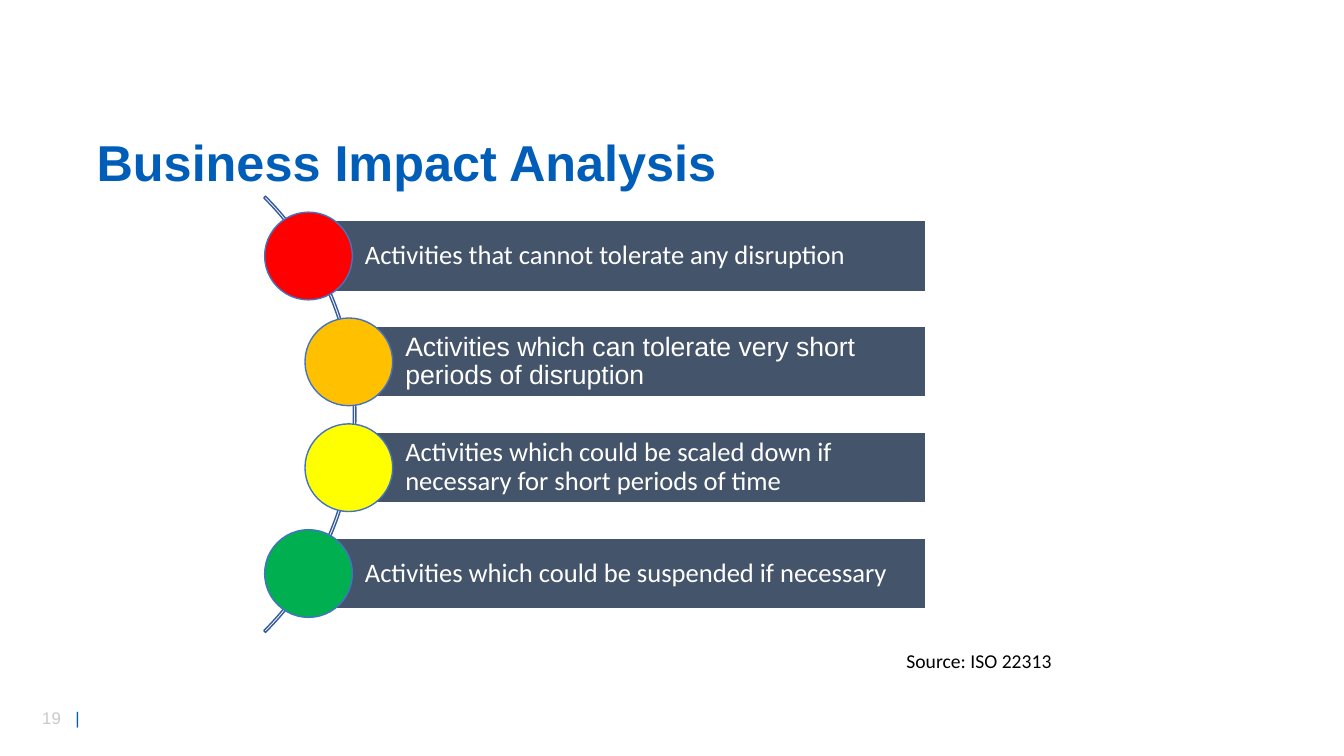
from pptx import Presentation
from pptx.dml.color import RGBColor
from pptx.enum.shapes import MSO_SHAPE
from pptx.enum.text import MSO_ANCHOR, PP_ALIGN
from pptx.oxml.ns import qn
from pptx.util import Inches, Pt
from lxml.etree import SubElement

BLUE = RGBColor(0x00, 0x5E, 0xB8)
SLATE = RGBColor(0x44, 0x54, 0x6A)
RIM = RGBColor(0x44, 0x72, 0xC4)
ARC = RGBColor(0x36, 0x5B, 0x9D)
GREY = RGBColor(0xC9, 0xC9, 0xC9)
WHITE = RGBColor(0xFF, 0xFF, 0xFF)
BLACK = RGBColor(0x00, 0x00, 0x00)
RED = RGBColor(0xFF, 0x00, 0x00)
AMBER = RGBColor(0xFF, 0xC0, 0x00)
YELLOW = RGBColor(0xFF, 0xFF, 0x00)
GREEN = RGBColor(0x00, 0xB0, 0x50)

LEVELS = [
    ("Activities that cannot tolerate any disruption", RED, 3.06, "Calibri"),
    ("Activities which can tolerate very short periods of disruption", AMBER, 3.46, "Arial"),
    ("Activities which could be scaled down if necessary for short periods of time",
     YELLOW, 3.46, "Calibri"),
    ("Activities which could be suspended if necessary", GREEN, 3.06, "Calibri"),
]
RIGHT, FIRST, STEP = 9.18, 2.54, 1.05
BAR, DOT = 0.7, 0.87


class Board:
    """Draws styled elements on the current slide."""

    def __init__(self, slide):
        self.slide = slide

    def style(self, run, size, color, font="Calibri", bold=False):
        run.font.name = font
        run.font.size = Pt(size)
        run.font.bold = bold
        run.font.color.rgb = color

    def fill(self, frame, text, *look, **more):
        frame.word_wrap = True
        frame.text = text
        para = frame.paragraphs[0]
        self.style(para.runs[0], *look, **more)
        return para

    def text(self, box, *look, **more):
        frame = self.slide.shapes.add_textbox(*map(Inches, box)).text_frame
        return self.fill(frame, *look, **more)

    def shape(self, kind, box, fill, line):
        shape = self.slide.shapes.add_shape(kind, *map(Inches, box))
        shape.shadow.inherit = False
        if fill is None:
            shape.fill.background()
        else:
            shape.fill.solid()
            shape.fill.fore_color.rgb = fill
        shape.line.color.rgb = line
        shape.line.width = Pt(1)
        return shape

    def arc(self, box):
        arc = self.shape(MSO_SHAPE.BLOCK_ARC, box, None, ARC)
        for spot, value in enumerate((189, 27, 0.004)):
            arc.adjustments[spot] = value

    def level(self, mid, text, color, left, font):
        box = (left, mid - BAR / 2, RIGHT - left, BAR)
        frame = self.shape(MSO_SHAPE.RECTANGLE, box, SLATE, WHITE).text_frame
        para = self.fill(frame, text, 19, WHITE, font)
        para.alignment = PP_ALIGN.LEFT
        para.line_spacing = 0.9
        frame.vertical_anchor = MSO_ANCHOR.MIDDLE
        frame.margin_left = Inches(0.56)
        frame.margin_right = frame.margin_top = frame.margin_bottom = Inches(0.05)
        self.shape(MSO_SHAPE.OVAL, (left - DOT / 2, mid - DOT / 2, DOT, DOT), color, RIM)

    def number(self, box, text):
        para = self.text(box, text, 12, GREY, "Arial")
        tabs = SubElement(para._p.get_or_add_pPr(), qn("a:tabLst"))
        SubElement(tabs, qn("a:tab"), pos=str(Inches(0.33)), algn="l")
        mark = para.add_run()
        mark.text = "\t|"
        self.style(mark, 12, BLUE, "Arial")


def main():
    deck = Presentation()
    deck.slide_width = Inches(13.33)
    deck.slide_height = Inches(7.5)
    board = Board(deck.slides.add_slide(deck.slide_layouts[6]))
    board.number((0.32, 6.97, 0.71, 0.3), "19")
    title = board.text((0.86, 1.32, 11.64, 0.67), "Business Impact Analysis",
                       36, BLUE, "Arial", bold=True)
    title.line_spacing = 0.9
    board.arc((-2.59, 1.05, 6.12, 6.12))
    for row, level in enumerate(LEVELS):
        board.level(FIRST + row * STEP, *level)
    source = board.text((8.13, 6.39, 2.4, 0.34), "Source: ISO 22313", 14, BLACK)
    source.alignment = PP_ALIGN.RIGHT
    deck.save("out.pptx")


if __name__ == "__main__":
    main()
